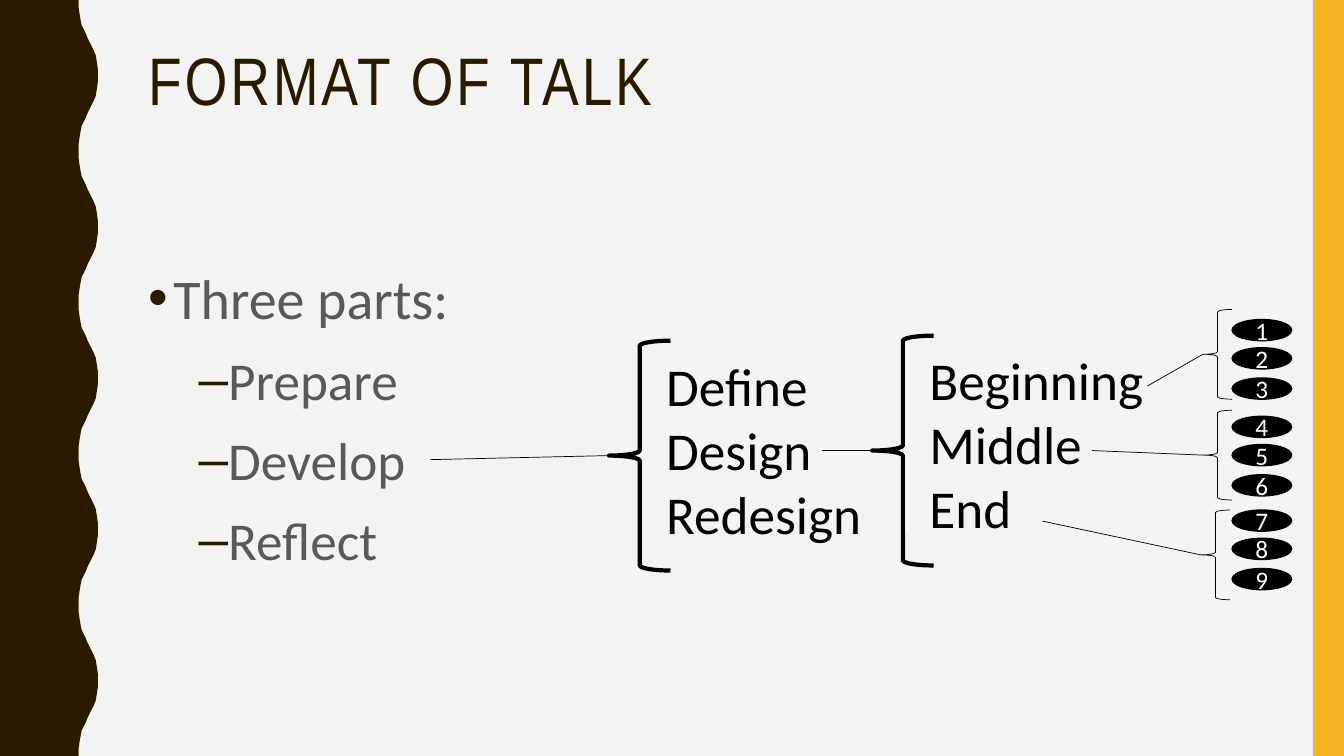
from lxml import etree
from pptx import Presentation
from pptx.dml.color import RGBColor
from pptx.enum.shapes import MSO_CONNECTOR as CONN, MSO_SHAPE as SHAPE
from pptx.enum.text import MSO_ANCHOR as ANCHOR, MSO_AUTO_SIZE as AUTO, PP_ALIGN as ALIGN
from pptx.oxml.ns import qn
from pptx.util import Inches, Pt

BROWN, GOLD, GREY, BLACK = "2A1A00", "F8B323", "595959", "000000"


def rgb(value):
    return RGBColor.from_string(value)


def style(p, size, color, font="Calibri"):
    for r in p.runs:
        r.font.size, r.font.name = Pt(size), font
        r.font.color.rgb = rgb(color)


prs = Presentation()
prs.slide_width, prs.slide_height = Inches(13.33), Inches(7.5)
s = prs.slides.add_slide(prs.slide_layouts[1])
s.background.fill.solid()
s.background.fill.fore_color.rgb = rgb("F3F3F2")

# Wavy left edge: five periods of 1.5 in, in hundredths of an inch
half_x = [78, 78, 79, 80, 81, 83, 85, 87, 89, 91, 93, 95, 96, 97, 97]
half_y = [0, 7, 14, 20, 25, 29, 33, 38, 42, 46, 50, 55, 61, 68, 75]
half = list(zip(half_x, half_y))
period = half + [(x, 150 - y) for x, y in reversed(half[:-1])]
wave = [(x, y + 150 * n) for n in range(5) for x, y in period]
builder = s.shapes.build_freeform(0, 0, scale=Inches(0.01))
builder.add_line_segments(wave + [(0, 750)], close=True)
edge = builder.convert_to_shape()

# Gold strip on the right
strip = s.shapes.add_shape(SHAPE.RECTANGLE, Inches(13.02), 0, Inches(0.31), prs.slide_height)
for sp, color in ((edge, BROWN), (strip, GOLD)):
    sp.shadow.inherit = False
    sp.fill.solid()
    sp.fill.fore_color.rgb = rgb(color)
    sp.line.fill.background()

# Title and list placeholders
title, body = s.shapes.title, s.placeholders[1]
for sp, top, height in ((title, 0.42, 1.63), (body, 2.5, 3.93)):
    sp.left, sp.top = Inches(1.37), Inches(top)
    sp.width, sp.height = Inches(11.13), Inches(height)
    sp.text_frame.auto_size = AUTO.NONE
    sp.text_frame.vertical_anchor = ANCHOR.TOP

title.text_frame.text = "FORMAT OF TALK"
p = title.text_frame.paragraphs[0]
p.alignment, p.line_spacing = ALIGN.LEFT, 0.9
style(p, 48, BROWN, "Arial Narrow")
p.runs[0].font._element.set("spc", "200")

body.text_frame.text = "Three parts:\nPrepare\nDevelop\nReflect"
for i, p in enumerate(body.text_frame.paragraphs):
    p.level = min(i, 1)
    p.line_spacing, p.space_before = 1.1, Pt(7)
    style(p, 38 if i else 40, GREY)
    pPr = p._p.get_or_add_pPr()
    pPr.set("marL", str(Inches(0.75 if i else 0.25)))
    pPr.set("indent", str(Inches(-0.25)))
    clr = etree.SubElement(pPr, qn("a:buClr"))
    etree.SubElement(clr, qn("a:srgbClr")).set("val", BROWN)
    etree.SubElement(pPr, qn("a:buFont")).set("typeface", "Arial")
    etree.SubElement(pPr, qn("a:buChar")).set("char", "–" if i else "•")

# Step columns
for left, top, text in ((6.01, 3.46, "Define\nDesign\nRedesign"),
                        (8.62, 3.4, "Beginning\nMiddle\nEnd")):
    tf = s.shapes.add_textbox(Inches(left), Inches(top), Inches(3.44), Inches(2.02)).text_frame
    tf.word_wrap = True
    tf.text = text
    for p in tf.paragraphs:
        p.level = 1
        p._p.get_or_add_pPr().set("marL", str(Inches(0.5)))
        style(p, 38, BLACK)

# Braces, each with the line that leads to its point
# left, top, width, height, weight, line start x, line start y
braces = [(6.04, 3.38, 0.61, 2.28, 3, 4.27, 4.56),
          (8.65, 3.33, 0.61, 2.28, 3, 8.15, 4.47),
          (11.93, 3.07, 0.29, 0.89, 0.5, 11.38, 3.83),
          (11.93, 4.07, 0.29, 0.89, 0.5, 10.83, 4.47),
          (11.91, 5.06, 0.29, 0.89, 0.5, 10.34, 5.17)]
for left, top, width, height, weight, x, y in braces:
    brace = s.shapes.add_shape(SHAPE.LEFT_BRACE, Inches(left), Inches(top),
                               Inches(width), Inches(height))
    brace.shadow.inherit = False
    brace.fill.background()
    lead = s.shapes.add_connector(CONN.STRAIGHT, Inches(left), Inches(top + height / 2),
                                  Inches(x), Inches(y))
    lead.begin_connect(brace, 1)
    for sp, pt in ((brace, weight), (lead, 0.5)):
        sp.line.color.rgb = rgb(BLACK)
        sp.line.width = Pt(pt)
    etree.SubElement(lead._element.spPr, qn("a:effectLst"))

# Numbered ovals in three groups of three
for group, top in enumerate((3.17, 4.13, 5.06)):
    for row, offset in enumerate((0, 0.28, 0.58)):
        oval = s.shapes.add_shape(SHAPE.OVAL, Inches(12.22), Inches(top + offset),
                                  Inches(0.59), Inches(0.21))
        oval.shadow.inherit = False
        oval.fill.solid()
        oval.fill.fore_color.rgb = oval.line.color.rgb = rgb(BLACK)
        oval.line.width = Pt(1)
        tf = oval.text_frame
        tf.text = str(3 * group + row + 1)
        tf.vertical_anchor = ANCHOR.MIDDLE
        tf.paragraphs[0].alignment = ALIGN.CENTER
        style(tf.paragraphs[0], 18, "FFFFFF")

prs.save("out.pptx")
